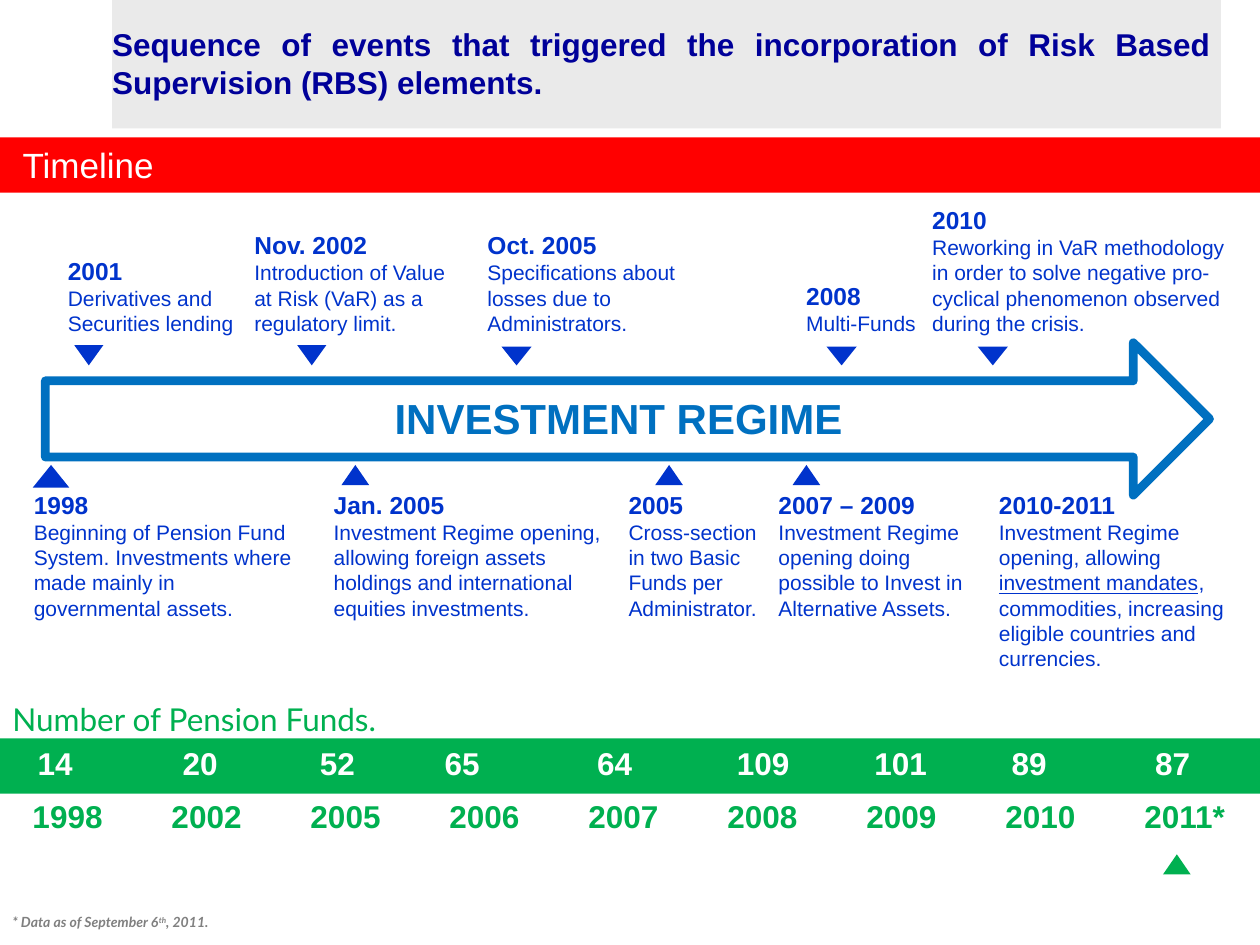
from pptx import Presentation
from pptx.dml.color import RGBColor
from pptx.enum.shapes import MSO_SHAPE
from pptx.enum.text import MSO_ANCHOR, PP_ALIGN
from pptx.util import Inches, Pt

RECT, ARROW, MARK = MSO_SHAPE.RECTANGLE, MSO_SHAPE.RIGHT_ARROW, MSO_SHAPE.DOWN_ARROW
LEFT, CENTER, JUSTIFY = PP_ALIGN.LEFT, PP_ALIGN.CENTER, PP_ALIGN.JUSTIFY
TOP, MIDDLE = MSO_ANCHOR.TOP, MSO_ANCHOR.MIDDLE
WIDE, HIGH = 10, 7.5
NAVY, BLUE, SKY, GREEN = "000099", "0033CC", "0070C0", "00B050"
RED, WHITE, PALE, GRAY = "FF0000", "FFFFFF", "EAEAEA", "808080"

TITLE = ("Sequence of events that triggered the incorporation of "
         "Risk Based Supervision (RBS) elements.")

# Events: left, width, lines of detail, date, detail (pairs carry a style)
ABOVE = [
    (0.44, 1.57, 2, "2001", "Derivatives and Securities lending"),
    (1.92, 1.75, 3, "Nov. 2002",
     "Introduction of Value at Risk (VaR) as a regulatory limit."),
    (3.77, 1.89, 3, "Oct. 2005",
     "Specifications about losses due to Administrators."),
    (6.3, 1.21, 1, "2008", "Multi-Funds"),
    (7.3, 2.55, 4, "2010",
     "Reworking in VaR methodology in order to solve negative "
     "pro-cyclical phenomenon observed during the crisis."),
]
BELOW = [
    (0.17, 2.26, 4, "1998",
     "Beginning of Pension Fund System. Investments where made mainly "
     "in governmental assets."),
    (2.55, 2.35, 4, "Jan. 2005",
     "Investment Regime opening, allowing foreign assets holdings and "
     "international equities investments."),
    (4.89, 1.33, 4, "2005",
     "Cross-section in two Basic Funds per Administrator."),
    (6.08, 1.72, 4, "2007 – 2009",
     "Investment Regime opening doing possible to Invest in "
     "Alternative Assets."),
    (7.83, 2.14, 6, "2010-2011",
     ["Investment Regime opening, allowing ",
      ("investment mandates", "under"),
      ", commodities, increasing eligible countries and currencies."]),
]

# Markers: left, top, width, height
DOWN = [(0.59, 2.74, 0.23, 0.16), (2.36, 2.74, 0.23, 0.16),
        (3.98, 2.75, 0.24, 0.15), (6.56, 2.75, 0.24, 0.15),
        (7.76, 2.75, 0.24, 0.15)]
UP = [(0.26, 3.69, 0.29, 0.18), (2.71, 3.69, 0.22, 0.16),
      (5.2, 3.69, 0.22, 0.16), (6.29, 3.69, 0.22, 0.16)]

# Funds: year, count, left of count
FUNDS = [("1998", "14", 0.2), ("2002", "20", 1.35), ("2005", "52", 2.44),
         ("2006", "65", 3.43), ("2007", "64", 4.64), ("2008", "109", 5.75),
         ("2009", "101", 6.84), ("2010", "89", 7.93), ("2011*", "87", 9.07)]
NOTE = ["* Data as of September 6", ("th", "super"), ", 2011."]


def color(code):
    return RGBColor.from_string(code)


def shape(kind, box, fill=None, line=None, weight=1):
    item = slide.shapes.add_shape(kind, *map(Inches, box))
    item.shadow.inherit = False
    if fill:
        item.fill.solid()
        item.fill.fore_color.rgb = color(fill)
    else:
        item.fill.background()
    if line:
        item.line.color.rgb = color(line)
        item.line.width = Pt(weight)
    else:
        item.line.fill.background()
    return item


def mark(box, fill, up=False):
    item = shape(MARK, box, fill)
    item.adjustments[0], item.adjustments[1] = 0.5, 1
    item.rotation = 180 if up else 0


def write(frame, parts, first=True, size=18, font="Arial", fill=BLUE,
          bold=False, italic=False, align=LEFT):
    para = frame.paragraphs[0] if first else frame.add_paragraph()
    para.alignment = align
    for part in [parts] if isinstance(parts, str) else parts:
        words, style = (part, None) if isinstance(part, str) else part
        run = para.add_run()
        run.text = words
        face = run.font
        face.size, face.name = Pt(size), font
        face.bold, face.italic = bold, italic
        face.color.rgb = color(fill)
        if style == "under":
            face.underline = True
        elif style == "super":
            run._r.get_or_add_rPr().set("baseline", "30000")


def frame(box, wrap=True):
    area = slide.shapes.add_textbox(*map(Inches, box)).text_frame
    area.word_wrap = wrap
    return area


def event(left, top, width, height, date, detail):
    area = frame((left, top, width, height))
    write(area, date, size=14, bold=True)
    write(area, detail, first=False, size=12)


deck = Presentation()
deck.slide_width, deck.slide_height = Inches(WIDE), Inches(HIGH)
slide = deck.slides.add_slide(deck.slide_layouts[6])

# Title
shape(RECT, (0.89, 0, 8.8, 1.02), PALE)
area = frame((0.89, 0.03, 8.72, 0.94))
area.margin_left = area.margin_right = area.margin_top = area.margin_bottom = 0
area.vertical_anchor = MIDDLE
write(area, TITLE, fill=NAVY, bold=True, align=JUSTIFY)

# Timeline band
area = shape(RECT, (0, 1.09, WIDE, 0.44), RED).text_frame
area.margin_left = Inches(0.18)
area.vertical_anchor = TOP
write(area, "Timeline", size=20, fill=WHITE)

# Large arrow
shape(ARROW, (0.36, 2.72, 9.24, 1.21), line=SKY, weight=5)
write(frame((0.96, 3.07, 7.9, 0.5)), "INVESTMENT REGIME", size=24, fill=SKY,
      bold=True, align=CENTER)

# Events: the upper row shares its bottom edge, the lower row its top edge
for row, upper in ((ABOVE, True), (BELOW, False)):
    for left, width, lines, date, detail in row:
        height = 0.34 + 0.2 * lines
        event(left, 2.72 - height if upper else 3.84, width, height,
              date, detail)
for box in DOWN:
    mark(box, BLUE)
for box in UP:
    mark(box, BLUE, up=True)

# Pension funds
shape(RECT, (0, 5.86, WIDE, 0.44), GREEN)
write(frame((0, 5.51, 4.18, 0.4)), "Number of Pension Funds.", font="Lato",
      fill=GREEN)
for col, (year, count, left) in enumerate(FUNDS):
    wide = 0.85 if year.endswith("*") else 0.76
    write(frame((0.16 + 1.103 * col, 6.28, wide, 0.4), wrap=False), year,
          fill=GREEN, bold=True)
    write(frame((left, 5.86, 0.2 + 0.14 * len(count), 0.4), wrap=False), count,
          fill=WHITE, bold=True)
mark((9.23, 6.78, 0.22, 0.16), GREEN, up=True)

# Footnote
write(frame((0, 7.2, WIDE, 0.24)), NOTE, size=8, font="Lato", fill=GRAY,
      bold=True, italic=True)

deck.save("out.pptx")
